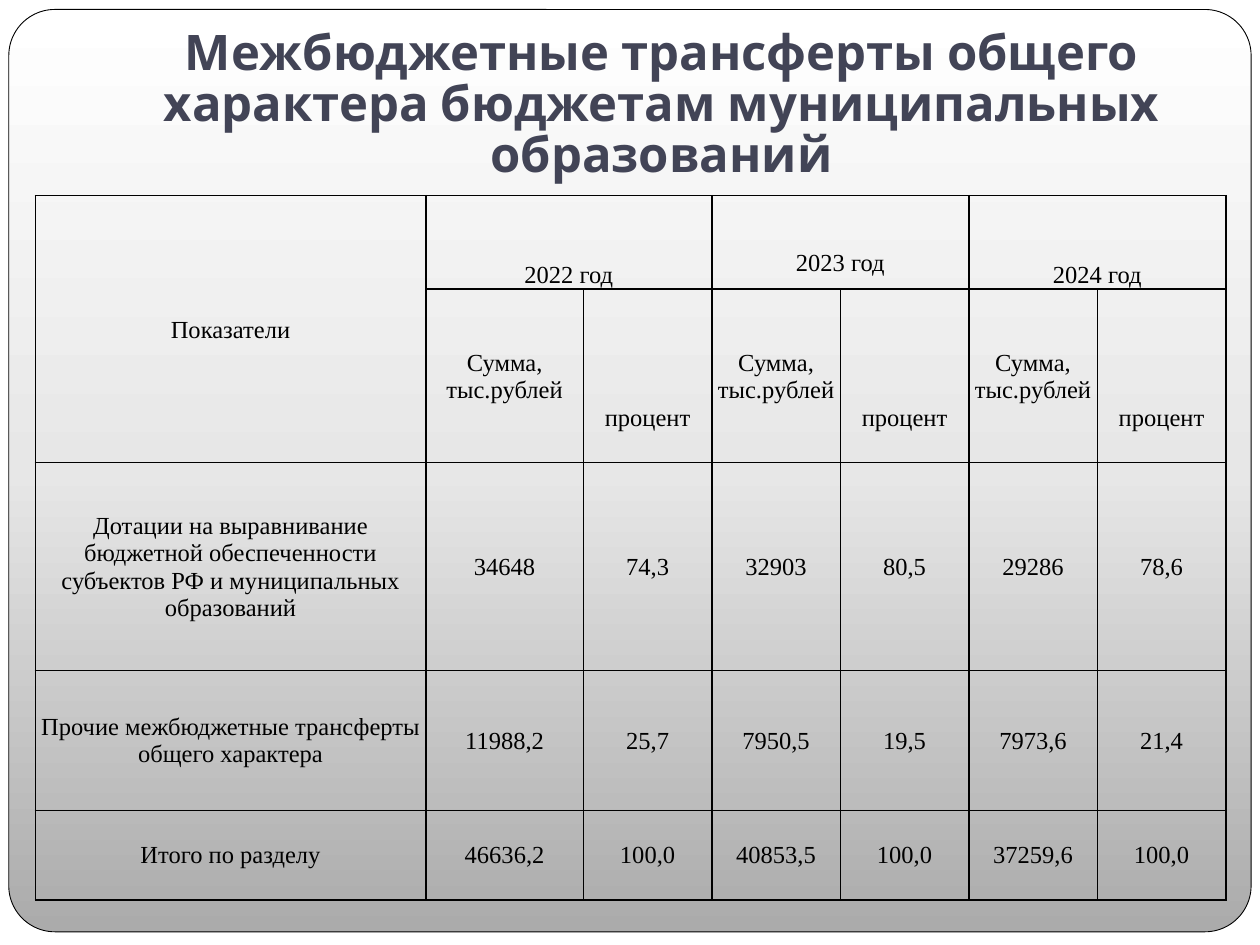
import pptx
import pptx.util
import pptx.dml.color
import pptx.enum.shapes
import pptx.enum.text
import pptx.oxml
import pptx.oxml.ns

HUES = {"ink": "000000", "title": "424456", "page": "FFFFFF",
        "low": "ABABAB", "mid": "E7E7E7", "high": "FFFFFF"}
MAIN = "http://schemas.openxmlformats.org/drawingml/2006/main"
ANCHOR = pptx.enum.text.MSO_ANCHOR
WIDE, HIGH = pptx.util.Inches(10), pptx.util.Inches(7.5)


def hue(name):
    return pptx.dml.color.RGBColor.from_string(HUES[name])


def put(frame, text, font="Times New Roman", size=14, color="ink", bold=False, space=None):
    frame.word_wrap = True
    line = frame.paragraphs[0]
    line.alignment = pptx.enum.text.PP_ALIGN.CENTER
    line.line_spacing = space
    run = line.add_run()
    run.text = text
    run.font.name = font
    run.font.size = pptx.util.Pt(size)
    run.font.bold = bold
    run.font.color.rgb = hue(color)


deck = pptx.Presentation()
deck.slide_width, deck.slide_height = WIDE, HIGH
slide = deck.slides.add_slide(deck.slide_layouts[6])
slide.background.fill.solid()
slide.background.fill.fore_color.rgb = hue("page")

panel = slide.shapes.add_shape(
    pptx.enum.shapes.MSO_SHAPE.ROUNDED_RECTANGLE,
    int(WIDE * 0.007), int(HIGH * 0.01), int(WIDE * 0.986), int(HIGH * 0.976))
panel.adjustments[0] = 0.05
panel.shadow.inherit = False
panel.line.color.rgb = hue("ink")
panel.line.width = pptx.util.Pt(0.5)
panel.fill.gradient()
panel.fill.gradient_angle = 90
stops = panel.fill._fill._gradFill.find(pptx.oxml.ns.qn("a:gsLst"))
for stop in list(stops):
    stops.remove(stop)
for share, name in ((0, "low"), (50, "mid"), (100, "high")):
    stops.append(pptx.oxml.parse_xml(
        f'<a:gs xmlns:a="{MAIN}" pos="{share * 1000}"><a:srgbClr val="{HUES[name]}"/></a:gs>'))

title = slide.shapes.add_textbox(
    int(WIDE * 0.1), int(HIGH * 0.04), int(WIDE * 0.85), int(HIGH * 0.167)).text_frame
title.vertical_anchor = ANCHOR.BOTTOM
title.margin_bottom = pptx.util.Inches(0.1)
put(title, "Межбюджетные трансферты общего характера бюджетам муниципальных образований",
    font="Karla", size=28, color="title", bold=True, space=0.87)

cols = [3.1, 1.25] + [1.02] * 5
rows = [0.74, 0.67, 0.71, 1.65, 1.11, 0.71]
grid = slide.shapes.add_table(
    len(rows), len(cols), int(WIDE * 0.028), int(HIGH * 0.207),
    pptx.util.Inches(sum(cols)), pptx.util.Inches(sum(rows))).table
grid.first_row = grid.horz_banding = False
for col, width in zip(grid.columns, cols):
    col.width = pptx.util.Inches(width)
for row, height in zip(grid.rows, rows):
    row.height = pptx.util.Inches(height)

facts = [
    ["Дотации на выравнивание бюджетной обеспеченности субъектов РФ и муниципальных образований",
     "34648", "74,3", "32903", "80,5", "29286", "78,6"],
    ["Прочие межбюджетные трансферты общего характера",
     "11988,2", "25,7", "7950,5", "19,5", "7973,6", "21,4"],
    ["Итого по разделу", "46636,2", "100,0", "40853,5", "100,0", "37259,6", "100,0"],
]
words = {(r, c): text for r, line in enumerate(facts, 3) for c, text in enumerate(line)}
words[0, 0] = "Показатели"
grid.cell(0, 0).merge(grid.cell(2, 0))
for c, year in zip((1, 3, 5), ("2022 год", "2023 год", "2024 год")):
    words[0, c] = year
    words[1, c] = "Сумма, тыс.рублей"
    words[2, c + 1] = "процент"
    grid.cell(0, c).merge(grid.cell(0, c + 1))
    grid.cell(1, c).merge(grid.cell(2, c))

ink = f'<a:solidFill><a:srgbClr val="{HUES["ink"]}"/></a:solidFill>'
for r in range(len(rows)):
    for c in range(len(cols)):
        cell = grid.cell(r, c)
        cell.margin_left = cell.margin_right = cell.margin_top = pptx.util.Inches(0.01)
        cell.margin_bottom = 0
        cell.vertical_anchor = ANCHOR.BOTTOM if r == 0 and c else ANCHOR.MIDDLE
        blank = {1: "B", 2: "T"}.get(r) if c in (2, 4, 6) else None
        for side in "LRTB":
            paint = "<a:noFill/>" if side == blank else ink
            cell._tc.get_or_add_tcPr().append(pptx.oxml.parse_xml(
                f'<a:ln{side} xmlns:a="{MAIN}" w="12700">{paint}</a:ln{side}>'))
        cell.fill.background()
        if (r, c) in words:
            put(cell.text_frame, words[r, c])

grid.cell(0, 3).vertical_anchor = ANCHOR.TOP
grid.cell(0, 3).margin_top = pptx.util.Inches(0.43)

deck.save("out.pptx")
